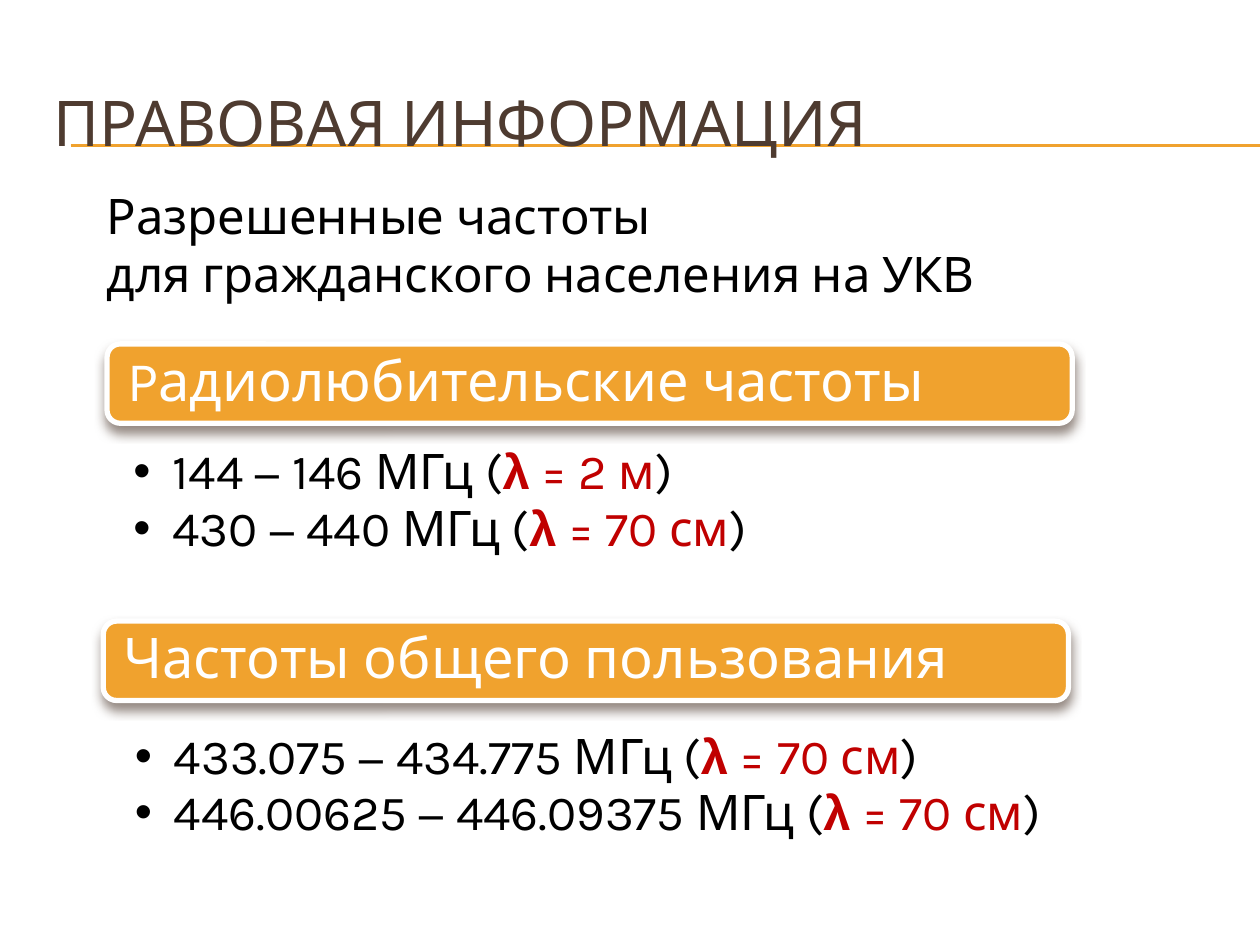
from dataclasses import dataclass

from lxml import etree
from pptx import Presentation
from pptx import util as u
from pptx.dml.color import RGBColor
from pptx.enum import shapes, text
from pptx.oxml import parse_xml
from pptx.oxml.ns import nsdecls, qn

ORANGE, BROWN, RED, BLACK, WHITE = "F0A22E", "4E3B30", "C00000", "000000", "FFFFFF"


@dataclass
class Run:
    words: str
    color: str = BLACK
    font: str = "Karla"
    bold: bool = False


@dataclass
class Band:
    frequencies: str
    wavelength: str


@dataclass
class Section:
    heading: str
    left: float
    top: float
    list_left: float
    list_top: float
    list_width: float
    bands: list[Band]


SECTIONS = [
    Section("Pадиолюбительские частоты", 0.85, 2.73, 0.81, 3.51, 7.73,
            [Band("144 − 146", "2 м"), Band("430 − 440", "70 см")]),
    Section("Частоты общего пользования", 0.82, 4.93, 0.82, 5.77, 7.96,
            [Band("433.075 − 434.775", "70 см"),
             Band("446.00625 − 446.09375", "70 см")]),
]


def rgb(color: str) -> RGBColor:
    return RGBColor.from_string(color)


def add_bullet(paragraph) -> None:
    properties = paragraph._p.get_or_add_pPr()
    properties.set("marL", str(u.Inches(0.31)))
    properties.set("indent", str(-u.Inches(0.31)))
    etree.SubElement(properties, qn("a:buFont")).set("typeface", "Arial")
    etree.SubElement(properties, qn("a:buChar")).set("char", "•")


def add_text(slide, left: float, top: float, width: float, height: float,
             paragraphs: list[list[Run]], *, size: float,
             anchor=text.MSO_ANCHOR.TOP, insets=(0.1, 0.05, 0.1, 0.05),
             line_spacing=None, space_after: float = 0, bullets=False) -> None:
    box = slide.shapes.add_textbox(*map(u.Inches, (left, top, width, height)))
    frame = box.text_frame
    frame.word_wrap = True
    frame.vertical_anchor = anchor
    (frame.margin_left, frame.margin_top,
     frame.margin_right, frame.margin_bottom) = map(u.Inches, insets)
    for index, runs in enumerate(paragraphs):
        paragraph = frame.add_paragraph() if index else frame.paragraphs[0]
        if bullets:
            add_bullet(paragraph)
        paragraph.line_spacing = line_spacing
        paragraph.space_after = u.Pt(space_after)
        for item in runs:
            for line_number, line in enumerate(item.words.split("\n")):
                if line_number:
                    paragraph.add_line_break()
                run = paragraph.add_run()
                run.text = line
                run.font.size = u.Pt(size)
                run.font.name = item.font
                run.font.bold = item.bold
                run.font.color.rgb = rgb(item.color)


def add_rule(slide, top: float) -> None:
    rule = slide.shapes.add_connector(
        shapes.MSO_CONNECTOR.STRAIGHT,
        u.Inches(0.56), u.Inches(top), u.Inches(10), u.Inches(top))
    rule.line.color.rgb = rgb(ORANGE)
    rule.line.width = u.Pt(0.75)
    etree.SubElement(rule._element.spPr, qn("a:effectLst"))


def add_bar(slide, left: float, top: float) -> None:
    bar = slide.shapes.add_shape(
        shapes.MSO_SHAPE.ROUNDED_RECTANGLE,
        *map(u.Inches, (left, top, 7.66, 0.63)))
    bar.fill.solid()
    bar.fill.fore_color.rgb = rgb(ORANGE)
    bar.line.color.rgb = rgb(WHITE)
    bar.line.width = u.Pt(3)
    bar.shadow.inherit = False
    bar._element.spPr.find(qn("a:effectLst")).append(parse_xml(
        f'<a:outerShdw {nsdecls("a")} blurRad="{u.Pt(6)}" dist="{u.Pt(4)}" '
        f'dir="5400000" rotWithShape="0"><a:srgbClr val="{BROWN}">'
        '<a:alpha val="60000"/></a:srgbClr></a:outerShdw>'))


def band_runs(band: Band) -> list[Run]:
    return [Run(f"{band.frequencies} МГц ("),
            Run("λ", RED, "Arial", True),
            Run(f" = {band.wavelength}", RED),
            Run(")")]


def add_section(slide, section: Section) -> None:
    add_bar(slide, section.left, section.top)
    add_text(slide, section.left + 0.03, section.top + 0.03, 7.6, 0.57,
             [[Run(section.heading, WHITE)]], size=32,
             anchor=text.MSO_ANCHOR.MIDDLE, insets=(0.13,) * 4, line_spacing=0.9)
    add_text(slide, section.list_left, section.list_top, section.list_width, 1.16,
             [band_runs(band) for band in section.bands], size=28,
             insets=(0.25, 0.04, 0.22, 0.04), line_spacing=0.9,
             space_after=2, bullets=True)


def main() -> None:
    presentation = Presentation()
    presentation.slide_width = u.Inches(10)
    presentation.slide_height = u.Inches(7.5)
    slide = presentation.slides.add_slide(presentation.slide_layouts[6])
    for top in (1.15, 1.16):
        add_rule(slide, top)
    add_text(slide, 0.33, 0.5, 9.5, 0.92, [[Run("ПРАВОВАЯ ИНФОРМАЦИЯ", BROWN)]],
             size=36, anchor=text.MSO_ANCHOR.MIDDLE)
    for section in SECTIONS:
        add_section(slide, section)
    add_text(slide, 0.75, 1.42, 7.4, 1.04,
             [[Run("Разрешенные частоты \nдля гражданского населения на УКВ")]],
             size=28)
    presentation.save("out.pptx")


if __name__ == "__main__":
    main()
